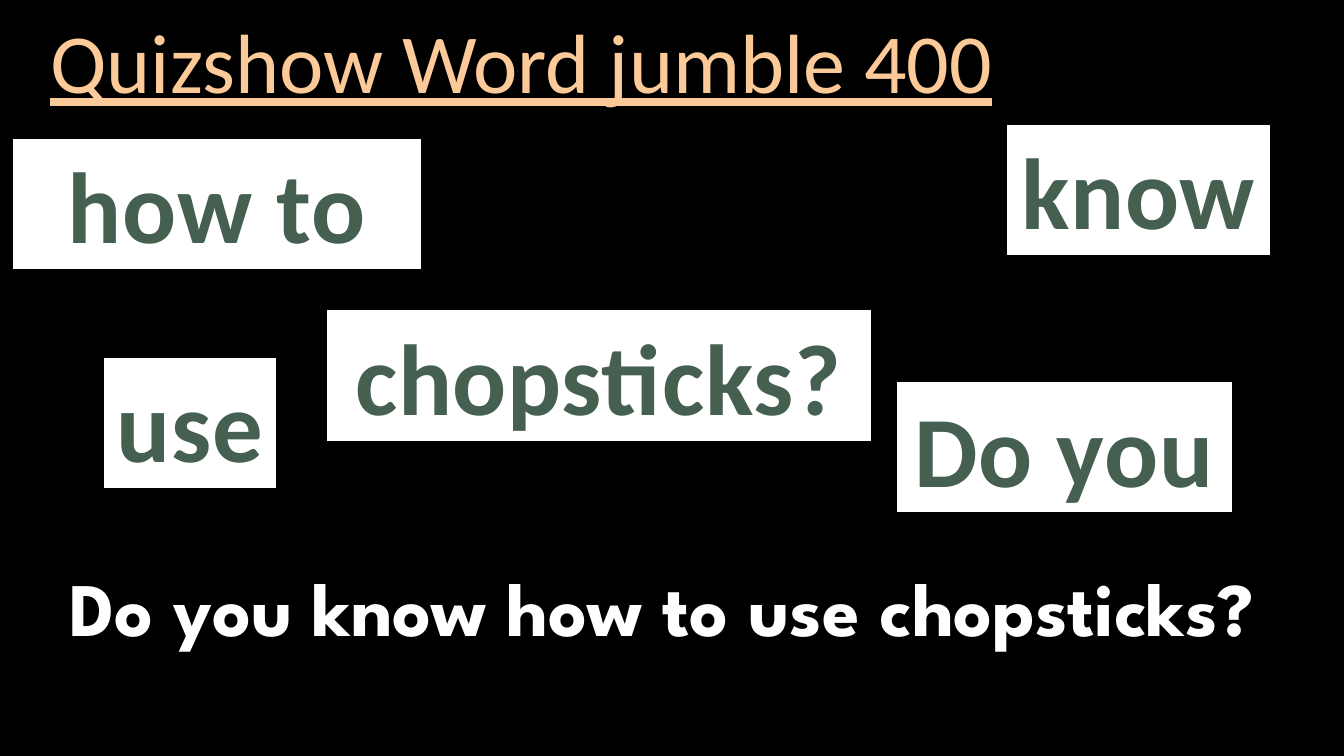
"""Build a word jumble quiz slide with its answer below."""
import dataclasses

import pptx
import pptx.dml.color
import pptx.enum.shapes
import pptx.enum.text
import pptx.util

Cm = pptx.util.Cm
Pt = pptx.util.Pt
Color = pptx.dml.color.RGBColor
Align = pptx.enum.text.PP_ALIGN
Anchor = pptx.enum.text.MSO_ANCHOR


@dataclasses.dataclass(frozen=True)
class Theme:
    black = Color.from_string("000000")
    white = Color.from_string("FFFFFF")
    peach = Color.from_string("FBCA98")
    green = Color.from_string("455F51")
    title_size = Pt(60)
    word_size = Pt(72)
    answer_size = Pt(54)
    body_font = "Calibri"
    answer_font = "League Spartan"


theme = Theme()


def write(box, text, *, size, color, font=theme.body_font, bold=False,
          underline=False, align=Align.CENTER, anchor=Anchor.TOP,
          wrap=True, line_spacing=1.0, tracking=None):
    frame = box.text_frame
    frame.word_wrap = wrap
    frame.vertical_anchor = anchor
    para = frame.paragraphs[0]
    para.alignment = align
    para.line_spacing = line_spacing
    span = para.add_run()
    span.text = text
    span.font.name = font
    span.font.size = size
    span.font.bold = bold
    span.font.underline = underline
    span.font.color.rgb = color
    if tracking is not None:
        span.font._element.set("spc", str(tracking))


deck = pptx.Presentation()
deck.slide_width = Cm(33.87)
deck.slide_height = Cm(19.05)
page = deck.slides.add_slide(deck.slide_layouts[6])
page.background.fill.solid()
page.background.fill.fore_color.rgb = theme.black

title = page.shapes.add_textbox(Cm(1.02), Cm(0.41), Cm(28.93), Cm(2.51))
write(title, "Quizshow Word jumble 400", size=theme.title_size,
      color=theme.peach, underline=True, align=Align.LEFT,
      anchor=Anchor.MIDDLE, line_spacing=0.9)

answer = page.shapes.add_textbox(Cm(-0.23), Cm(14.02), Cm(33.83), Cm(4.88))
write(answer, "Do you know how to use chopsticks?", size=theme.answer_size,
      color=theme.white, font=theme.answer_font, bold=True)

card_height = Cm(3.32)
cards = [
    ("know", 25.35, 3.13, 6.68, False),
    ("Do you", 22.58, 9.61, 8.48, False),
    ("how to", 0.31, 3.48, 10.31, True),
    ("use", 2.61, 9.0, 4.36, False),
    ("chopsticks?", 8.22, 7.8, 13.74, True),
]
for word, left, top, width, wrap in cards:
    card = page.shapes.add_shape(
        pptx.enum.shapes.MSO_SHAPE.RECTANGLE,
        Cm(left), Cm(top), Cm(width), card_height)
    card.shadow.inherit = False
    card.fill.solid()
    card.fill.fore_color.rgb = theme.white
    card.line.color.rgb = theme.black
    card.line.width = Pt(1)
    write(card, word, size=theme.word_size, color=theme.green, bold=True,
          wrap=wrap, tracking=50)

deck.save("out.pptx")
